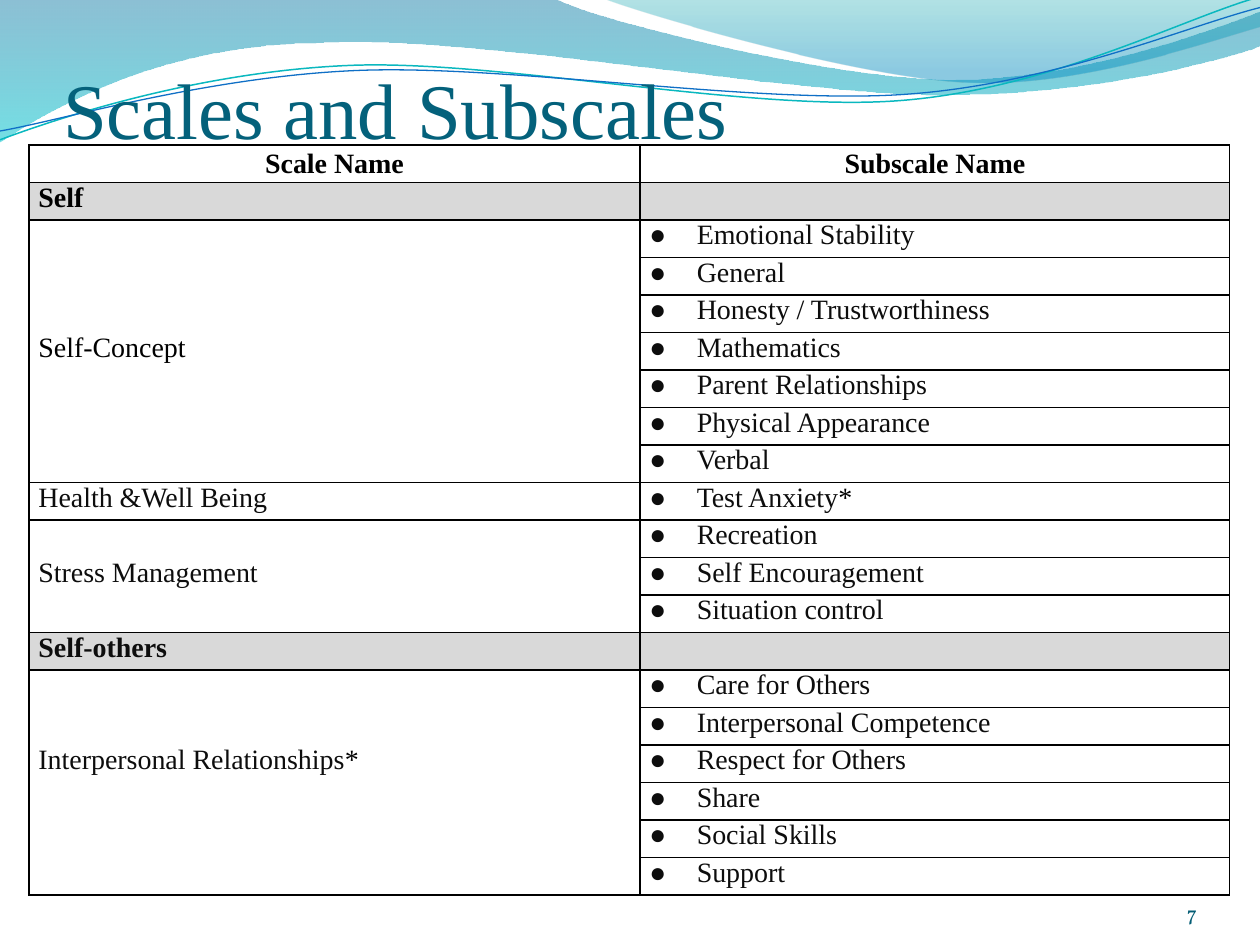
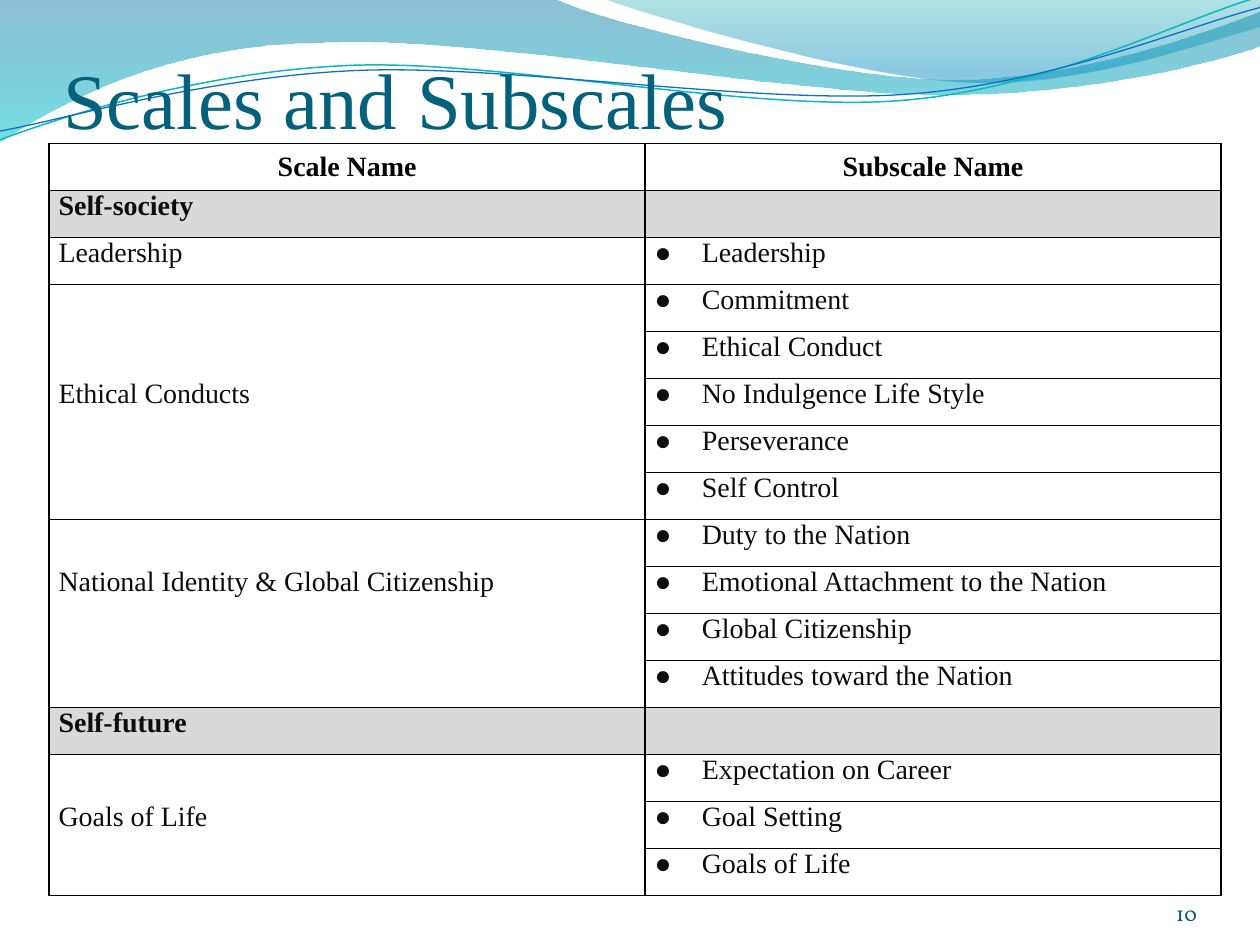
from lxml import etree
from pptx import Presentation
from pptx.dml.color import RGBColor
from pptx.enum import text
from pptx.oxml.ns import qn
from pptx.util import Emu, Pt

SCALE = 9144  # EMU per px, 100 px to the inch
SERIF, NUMBER_FONT = "Times New Roman", "Vollkorn"
CELL_INSET, BULLET_INDENT = Pt(5.4), Pt(27)
BLACK = RGBColor(0x00, 0x00, 0x00)
INK = RGBColor(0x0D, 0x0D, 0x0D)
BAND = RGBColor(0xD9, 0xD9, 0xD9)
TITLE = RGBColor(0x04, 0x61, 0x7B)
NUMBER = RGBColor(0x04, 0x5D, 0x75)
DEEP_BLUE = RGBColor(0x00, 0x74, 0xA1)
CYAN = RGBColor(0x00, 0xC6, 0xCF)
TEAL = RGBColor(0x00, 0xA1, 0xA9)
SKY = RGBColor(0x00, 0x8B, 0xBF)
LINE_TEAL = RGBColor(0x0A, 0xB8, 0xBF)
LINE_BLUE = RGBColor(0x0F, 0x6F, 0xC6)
BLACK_LABELS = {"Self", "Self-Concept"}
LEFT, CENTER = text.PP_ALIGN.LEFT, text.PP_ALIGN.CENTER

# Waves: each step is one point (straight) or three (Bezier curve)
WIDE_WAVE = [[(0, -1)], [(440, -1)], [(476, 17), (664, 63), (758, 63)],
             [(853, 63), (958, 26), (1000, 9)], [(1001, 36)],
             [(983, 44), (870, 76), (746, 75)], [(622, 75), (382, 28), (257, 34)],
             [(129, 35), (46, 83), (-1, 113)], [(0, -1)]]
RIGHT_WAVE = [[(479, -1)], [(509, 11), (682, 62), (769, 65)],
              [(856, 69), (961, 32), (1000, 21)], [(1000, 0)], [(479, -1)]]
TEAL_LINE = [[(0, 111)], [(48, 93), (158, 57), (277, 52)],
             [(395, 47), (593, 89), (713, 80)], [(833, 71), (938, 15), (998, -2)]]
BLUE_LINE = [[(0, 104)], [(47, 96), (164, 61), (283, 56)],
             [(403, 51), (597, 83), (717, 75)], [(836, 67), (941, 21), (1000, 6)]]


def px(n):
    return Emu(round(n * SCALE))


def box_px(*box):
    return [px(n) for n in box]


def add_outline(slide, steps, close):
    start, *rest = [(px(x), px(y)) for step in steps for x, y in step]
    builder = slide.shapes.build_freeform(*start)
    builder.add_line_segments(rest, close=close)
    sp = builder.convert_to_shape()
    sp.shadow.inherit = False
    # Join each three segments of a curved step into one Bezier curve
    segments = iter(list(sp.element.iter(qn("a:lnTo"))))
    for step in steps[1:]:
        curve, *others = [next(segments) for _ in step]
        if others:
            curve.tag = qn("a:cubicBezTo")
            for segment in others:
                curve.append(segment[0])
                segment.getparent().remove(segment)
    return sp


def add_wave(slide, steps, stops):
    sp = add_outline(slide, steps, True)
    sp.line.fill.background()
    sp.fill.gradient()
    sp.fill.gradient_angle = 270
    for stop, (position, color, _) in zip(sp.fill.gradient_stops, stops):
        stop.position = position
        stop.color.rgb = color
    colors = sp.element.spPr.iter(qn("a:srgbClr"))
    for color, (_, _, opacity) in zip(colors, stops):
        etree.SubElement(color, qn("a:alpha")).set("val", str(opacity * 1000))


def add_wave_line(slide, steps, color, width):
    sp = add_outline(slide, steps, False)
    sp.fill.background()
    sp.line.color.rgb = color
    sp.line.width = Pt(width)


def add_header_waves(slide):
    add_wave(slide, WIDE_WAVE, [(0, DEEP_BLUE, 45), (1, CYAN, 55)])
    add_wave(slide, RIGHT_WAVE, [(0, TEAL, 30), (0.8, SKY, 45)])
    add_wave_line(slide, TEAL_LINE, LINE_TEAL, 0.85)
    add_wave_line(slide, BLUE_LINE, LINE_BLUE, 0.75)


def add_run(p, words, size, color, font=SERIF, bold=False):
    r = p.add_run()
    r.text = words
    r.font.name, r.font.size, r.font.bold = font, Pt(size), bold
    r.font.color.rgb = color


def set_frame(tf, top_inset=0):
    tf.margin_left = tf.margin_right = tf.margin_bottom = 0
    tf.margin_top = px(top_inset)
    tf.word_wrap = True
    tf.auto_size = text.MSO_AUTO_SIZE.NONE
    tf.vertical_anchor = text.MSO_ANCHOR.BOTTOM


def set_title(slide, words, box):
    title = slide.shapes.title
    title.left, title.top, title.width, title.height = box_px(*box)
    set_frame(title.text_frame, 5)
    p = title.text_frame.paragraphs[0]
    p.alignment = LEFT
    add_run(p, words, 45, TITLE)
    slide.shapes.element.append(title.element)  # in front of the waves


def add_number(slide, number):
    tf = slide.shapes.add_textbox(*box_px(867, 695, 83, 40)).text_frame
    set_frame(tf)
    p = tf.paragraphs[0]
    p.alignment = text.PP_ALIGN.RIGHT
    add_run(p, number, 12, NUMBER, NUMBER_FONT)


def set_borders(cell, sides):
    tc_pr = cell._tc.get_or_add_tcPr()
    for i, side in enumerate("LRTB"):
        ln = etree.Element(qn("a:ln" + side), w=str(Pt(1)))
        if side in sides:
            fill = etree.SubElement(ln, qn("a:solidFill"))
            etree.SubElement(fill, qn("a:srgbClr")).set("val", str(BLACK))
        else:
            etree.SubElement(ln, qn("a:noFill"))
        tc_pr.insert(i, ln)


def add_bullet(p):
    p_pr = p._p.get_or_add_pPr()
    p_pr.set("marL", str(BULLET_INDENT))
    p_pr.set("indent", str(-BULLET_INDENT))
    etree.SubElement(p_pr, qn("a:buFont")).set("typeface", SERIF)
    etree.SubElement(p_pr, qn("a:buChar")).set("char", "●")


def fill_cell(cell, words="", bold=False, color=INK, align=LEFT, bullet=False,
              band=False, sides="LRTB"):
    cell.margin_left = cell.margin_right = CELL_INSET
    cell.margin_top = cell.margin_bottom = 0
    cell.vertical_anchor = text.MSO_ANCHOR.MIDDLE if align == CENTER else text.MSO_ANCHOR.TOP
    if band:
        cell.fill.solid()
        cell.fill.fore_color.rgb = BAND
    else:
        cell.fill.background()
    set_borders(cell, sides)

    p = cell.text_frame.paragraphs[0]
    p.alignment = align
    if not words:
        p._p.get_or_add_endParaRPr().set("sz", "1600")
        return
    if bullet:
        add_bullet(p)
    name, star, _ = words.partition("*")
    add_run(p, name, 16, BLACK if name in BLACK_LABELS else color, bold=bold)
    if star:
        add_run(p, star, 16, BLACK)


def add_scale_table(slide, box, col_widths, sections, bullet_align):
    n_rows = 1 + sum(1 + sum(len(subs) for _, subs in groups) for _, groups in sections)
    table = slide.shapes.add_table(n_rows, 2, *box_px(*box)).table
    table.first_row = table.horz_banding = False
    for column, width in zip(table.columns, col_widths):
        column.width = px(width)
    for row in table.rows:
        row.height = px(box[3] / n_rows)

    for col, head in enumerate(("Scale Name", "Subscale Name")):
        fill_cell(table.cell(0, col), head, True, BLACK, CENTER)
    row = 1
    for section, groups in sections:
        fill_cell(table.cell(row, 0), section, True, band=True)
        fill_cell(table.cell(row, 1), band=True)
        row += 1
        for scale, subs in groups:
            last = len(subs) - 1
            for i, sub in enumerate(subs):
                # The scale name stands in the middle row of an open block
                sides = "LR" + "T" * (i == 0) + "B" * (i == last)
                fill_cell(table.cell(row, 0), scale if i == last // 2 else "", sides=sides)
                fill_cell(table.cell(row, 1), sub, align=bullet_align, bullet=True)
                row += 1


def add_scale_slide(prs, number, title_top, box, col_widths, sections, bullet_align):
    slide = prs.slides.add_slide(prs.slide_layouts[5])
    add_header_waves(slide)
    set_title(slide, "Scales and Subscales", (50, title_top, 900, 69))
    add_scale_table(slide, box, col_widths, sections, bullet_align)
    add_number(slide, number)


SELF_SECTIONS = [
    ("Self", [
        ("Self-Concept", ["Emotional Stability", "General", "Honesty / Trustworthiness",
                          "Mathematics", "Parent Relationships", "Physical Appearance",
                          "Verbal"]),
        ("Health &Well Being", ["Test Anxiety*"]),
        ("Stress Management", ["Recreation", "Self Encouragement", "Situation control"]),
    ]),
    ("Self-others", [
        ("Interpersonal Relationships*", ["Care for Others", "Interpersonal Competence",
                                          "Respect for Others", "Share", "Social Skills",
                                          "Support"]),
    ]),
]
SOCIETY_SECTIONS = [
    ("Self-society", [
        ("Leadership", ["Leadership"]),
        ("Ethical Conducts", ["Commitment", "Ethical Conduct", "No Indulgence Life Style",
                              "Perseverance", "Self Control"]),
        ("National Identity & Global Citizenship",
         ["Duty to the Nation", "Emotional Attachment to the Nation",
          "Global Citizenship", "Attitudes toward the Nation"]),
    ]),
    ("Self-future", [
        ("Goals of Life", ["Expectation on Career", "Goal Setting", "Goals of Life"]),
    ]),
]


def main():
    prs = Presentation()
    prs.slide_width, prs.slide_height = px(1000), px(750)
    add_scale_slide(prs, "7", 54, (23, 115, 953, 596), (485, 468),
                    SELF_SECTIONS, text.PP_ALIGN.JUSTIFY)
    add_scale_slide(prs, "10", 46, (39, 114, 930, 597), (473, 457),
                    SOCIETY_SECTIONS, LEFT)
    prs.save("out.pptx")


if __name__ == "__main__":
    main()
